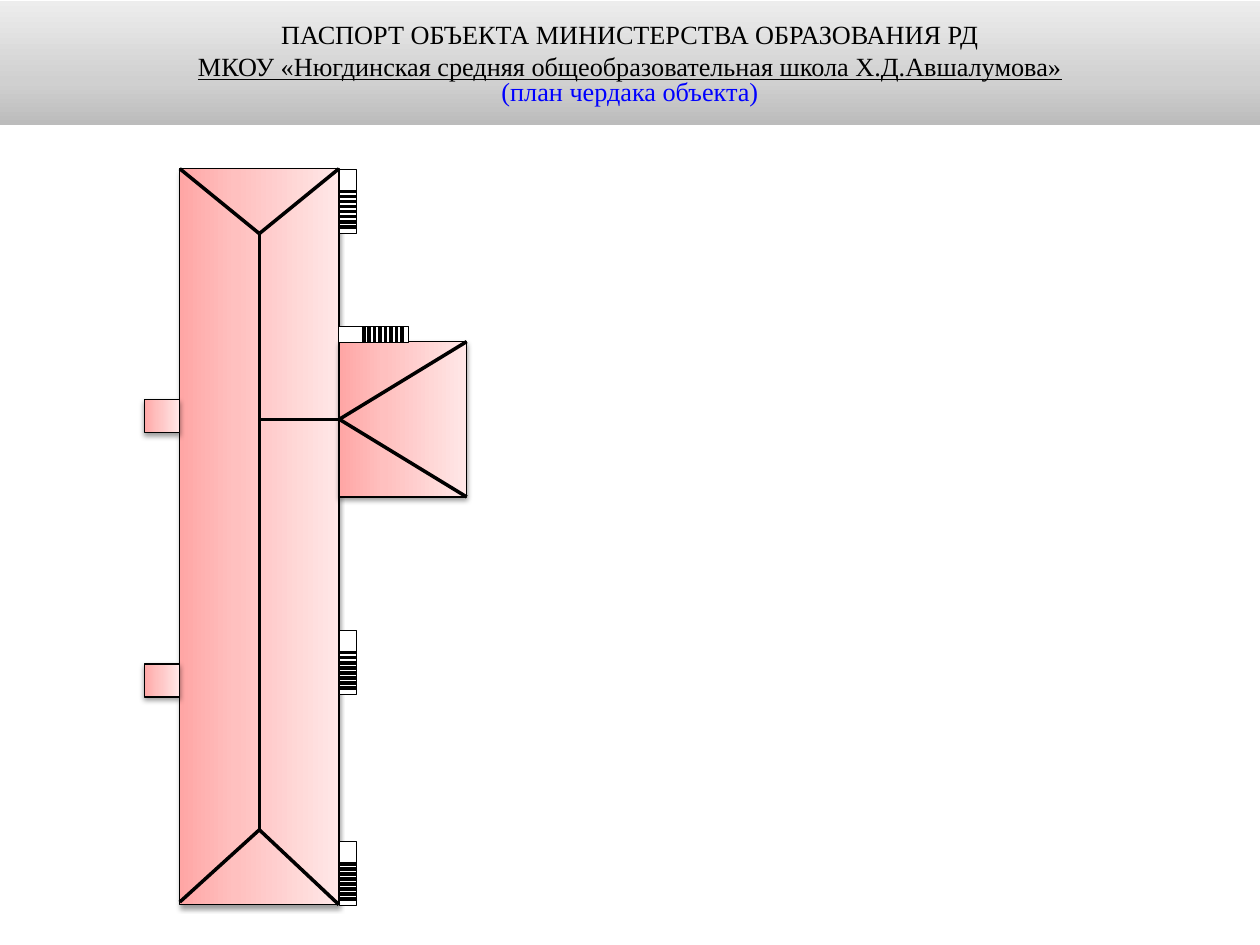
from copy import deepcopy
from dataclasses import dataclass

from pptx import Presentation
from pptx import util as u
from pptx.dml.color import RGBColor
from pptx.enum import shapes, text
from pptx.oxml import parse_xml
from pptx.oxml.ns import nsdecls, qn

BLACK, WHITE, BLUE = "000000", "FFFFFF", "0000FF"
ROOF_COLORS = ("FFA6A5", "FFC0BF", "FFE7E7")
BANNER_COLORS = ("BCBCBC", "D0D0D0", "EDEDED")
GRADIENT_POSITIONS = (0, 0.35, 1)
STEP_COUNT = 8


@dataclass
class Area:
    left: float
    top: float
    width: float
    height: float

    @property
    def right(self) -> float:
        return self.left + self.width

    @property
    def bottom(self) -> float:
        return self.top + self.height


@dataclass
class Stair:
    area: Area
    first_step: float
    step_gap: float


MAIN_ROOF = Area(102.7, 96.4, 91, 420.6)
WING_ROOF = Area(193.9, 195.2, 72.8, 88.8)
PORCHES = [Area(82.6, top, 20.1, 18.9) for top in (228.3, 379.4)]
STAIRS = [Stair(Area(193.9, top, 9.9, 36.7), 12.8, 2.87)
          for top in (96.7, 360.2, 480.8)]
STAIRS.append(Stair(Area(193.6, 186.6, 40, 9.2), 14.3, 3.1))


def color(value: str) -> RGBColor:
    return RGBColor.from_string(value)


def fill_gradient(shape, colors: tuple, angle: float) -> None:
    shape.fill.gradient()
    shape.fill.gradient_angle = angle
    stop_list = next(shape._element.spPr.iter(qn("a:gsLst")))
    stop_list.append(deepcopy(stop_list[-1]))
    for stop, position, value in zip(shape.fill.gradient_stops,
                                     GRADIENT_POSITIONS, colors):
        stop.position = position
        stop.color.rgb = color(value)


def draw_box(page, area: Area):
    box = page.shapes.add_shape(
        shapes.MSO_SHAPE.RECTANGLE, u.Pt(area.left), u.Pt(area.top),
        u.Pt(area.width), u.Pt(area.height))
    box.shadow.inherit = False
    box.line.color.rgb = color(BLACK)
    box.line.width = u.Pt(0)
    return box


def draw_line(page, start: tuple, end: tuple) -> None:
    line = page.shapes.add_connector(
        shapes.MSO_CONNECTOR.STRAIGHT, *(u.Pt(value) for value in start + end))
    line.line.color.rgb = color(BLACK)
    line.line.width = u.Pt(0)
    line._element.spPr.append(parse_xml(f"<a:effectLst {nsdecls('a')}/>"))


def draw_roof(page, area: Area) -> None:
    box = draw_box(page, area)
    fill_gradient(box, ROOF_COLORS, 0)
    effects = box._element.spPr.find(qn("a:effectLst"))
    effects.append(parse_xml(
        f'<a:outerShdw {nsdecls("a")} blurRad="{u.Pt(3.1)}" dist="{u.Pt(1.6)}" '
        'dir="5400000" rotWithShape="0"><a:srgbClr val="000000">'
        '<a:alpha val="38000"/></a:srgbClr></a:outerShdw>'))


def draw_stair(page, stair: Stair) -> None:
    area = stair.area
    box = draw_box(page, area)
    box.fill.solid()
    box.fill.fore_color.rgb = color(WHITE)
    for index in range(STEP_COUNT):
        offset = stair.first_step + index * stair.step_gap
        if area.width > area.height:
            x = area.left + offset
            draw_line(page, (x, area.top), (x, area.bottom))
        else:
            y = area.top + offset
            draw_line(page, (area.left, y), (area.right, y))


def draw_ridges(page) -> None:
    roof, wing = MAIN_ROOF, WING_ROOF
    middle = roof.left + roof.width / 2
    upper, lower = (middle, 133.5), (middle, 474.2)
    joint = (wing.left, wing.top + wing.height / 2)
    for start, end in (
            (upper, lower),
            ((roof.left, roof.top), upper),
            ((roof.right, roof.top), upper),
            (lower, (roof.left, roof.bottom - 1.5)),
            (lower, (roof.right, roof.bottom)),
            ((middle, joint[1]), joint),
            (joint, (wing.right, wing.top)),
            (joint, (wing.right, wing.bottom))):
        draw_line(page, start, end)


def write_banner(page) -> None:
    title = page.shapes.title
    title.left, title.top = u.Pt(0), u.Pt(0.5)
    title.width, title.height = u.Pt(720), u.Pt(70.8)
    fill_gradient(title, BANNER_COLORS, 90)
    frame = title.text_frame
    frame.word_wrap = True
    frame.auto_size = text.MSO_AUTO_SIZE.NONE
    frame.vertical_anchor = text.MSO_ANCHOR.MIDDLE
    frame.margin_left = frame.margin_right = u.Pt(7.2)
    frame.margin_top = frame.margin_bottom = u.Pt(3.6)
    frame.text = ("ПАСПОРТ ОБЪЕКТА МИНИСТЕРСТВА ОБРАЗОВАНИЯ РД\n"
                  "МКОУ «Нюгдинская средняя общеобразовательная школа Х.Д.Авшалумова»\n"
                  "(план чердака объекта)")
    for paragraph in frame.paragraphs:
        paragraph.alignment = text.PP_ALIGN.CENTER
        paragraph.font.name = "Times New Roman"
        paragraph.font.size = u.Pt(15)
        paragraph.font.color.rgb = color(BLACK)
    _, school, subject = frame.paragraphs
    school.font.underline = True
    subject.line_spacing = 0.8
    subject.font.color.rgb = color(BLUE)


def main() -> None:
    deck = Presentation()
    deck.slide_width, deck.slide_height = u.Pt(720), u.Pt(540)
    page = deck.slides.add_slide(deck.slide_layouts[5])

    # Heading banner
    write_banner(page)

    # Roofs, stairs and porches
    for area in (MAIN_ROOF, WING_ROOF):
        draw_roof(page, area)
    for stair in STAIRS:
        draw_stair(page, stair)
    for area in PORCHES:
        draw_roof(page, area)

    # Ridge and hip lines
    draw_ridges(page)
    deck.save("out.pptx")


if __name__ == "__main__":
    main()
